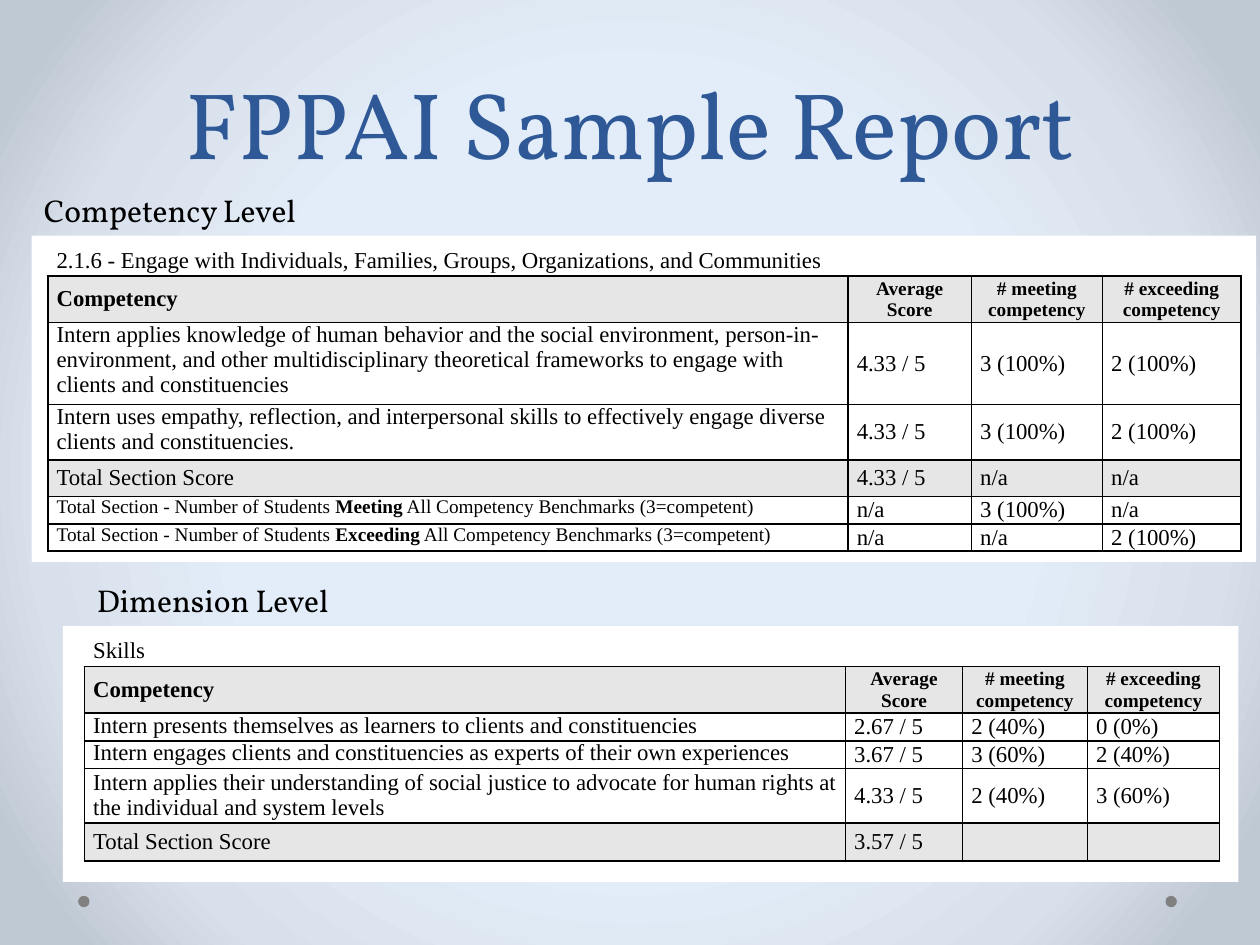
"""Build the FPPAI sample report slide with its competency and dimension tables."""
from lxml import etree
from pptx import Presentation
from pptx.dml.color import RGBColor
from pptx.enum.shapes import MSO_SHAPE
from pptx.enum.text import MSO_ANCHOR, MSO_AUTO_SIZE, PP_ALIGN
from pptx.oxml import parse_xml
from pptx.util import Inches, Pt

RECT, OVAL = MSO_SHAPE.RECTANGLE, MSO_SHAPE.OVAL
TOP, MIDDLE, BOTTOM = MSO_ANCHOR.TOP, MSO_ANCHOR.MIDDLE, MSO_ANCHOR.BOTTOM
LEFT, CENTER = PP_ALIGN.LEFT, PP_ALIGN.CENTER
NO_FIT, GROW = MSO_AUTO_SIZE.NONE, MSO_AUTO_SIZE.SHAPE_TO_FIT_TEXT
A = "http://schemas.openxmlformats.org/drawingml/2006/main"
P = "http://schemas.openxmlformats.org/presentationml/2006/main"

THEME = {
    "heading_font": "Vollkorn", "table_font": "Times New Roman",
    "title": "2F5897", "ink": "000000", "panel": "FFFFFF", "shade": "E7E6E6", "dot": "808080",
    "glow": [(50, "E3EDF9"), (76, "D8E0EB"), (92, "BFC9D4")],
    "title_size": 54, "label_size": 18, "cell_size": 13, "small_size": 11,
}

TITLE = "FPPAI Sample Report"
HEADER = ["Competency", "Average Score", "# meeting competency", "# exceeding competency"]
TOTAL = "Total Section Score"
SECTIONS = [
    {
        "label": "Competency Level", "label_at": (0.25, 1.47, 3, 0.4),
        "panel_at": (0.25, 1.87, 9.72, 2.59), "table_at": (0.38, 1.97),
        "columns": [6.35, 0.98, 1.04, 1.1],
        "heights": [0.22, 0.37, 0.65, 0.44, 0.29, 0.21, 0.21],
        "caption": "2.1.6 - Engage with Individuals, Families, Groups, Organizations, and Communities",
        "rows": [
            ["Intern applies knowledge of human behavior and the social environment, person-in-environment, "
             "and other multidisciplinary theoretical frameworks to engage with clients and constituencies",
             "4.33 / 5", "3 (100%)", "2 (100%)"],
            ["Intern uses empathy, reflection, and interpersonal skills to effectively engage diverse "
             "clients and constituencies.", "4.33 / 5", "3 (100%)", "2 (100%)"],
            [TOTAL, "4.33 / 5", "n/a", "n/a"],
            ["Total Section - Number of Students **Meeting** All Competency Benchmarks (3=competent)",
             "n/a", "3 (100%)", "n/a"],
            ["Total Section - Number of Students **Exceeding** All Competency Benchmarks (3=competent)",
             "n/a", "n/a", "2 (100%)"],
        ],
    },
    {
        "label": "Dimension Level", "label_at": (0.67, 4.56, 3, 0.4),
        "panel_at": (0.5, 4.97, 9.33, 2.03), "table_at": (0.67, 5.07),
        "columns": [6.04, 0.93, 0.99, 1.05],
        "heights": [0.22, 0.37, 0.22, 0.22, 0.43, 0.3],
        "caption": "Skills",
        "rows": [
            ["Intern presents themselves as learners to clients and constituencies",
             "2.67 / 5", "2 (40%)", "0 (0%)"],
            ["Intern engages clients and constituencies as experts of their own experiences",
             "3.67 / 5", "3 (60%)", "2 (40%)"],
            ["Intern applies their understanding of social justice to advocate for human rights at "
             "the individual and system levels", "4.33 / 5", "2 (40%)", "3 (60%)"],
            [TOTAL, "3.57 / 5", "", ""],
        ],
    },
]
DOTS = [(9.25, 7.11, 0.09, 0.09), (0.62, 7.11, 0.09, 0.09)]


def box(at):
    return [Inches(length) for length in at]


def apply(target, values):
    for name, value in values.items():
        setattr(target, name, value)


def write(paragraph, text, size, font, color, bold=False):
    for index, piece in enumerate(text.split("**")):
        if piece:
            run = paragraph.add_run()
            run.text = piece
            apply(run.font, {"size": Pt(size), "name": font, "bold": bold or index % 2 == 1})
            run.font.color.rgb = RGBColor.from_string(color)


def paint_background(slide):
    stops = "".join(f'<a:gs pos="{pos * 1000}"><a:srgbClr val="{color}"/></a:gs>'
                    for pos, color in THEME["glow"])
    slide.element.cSld.insert(0, parse_xml(
        f'<p:bg xmlns:p="{P}" xmlns:a="{A}"><p:bgPr><a:gradFill rotWithShape="1">'
        f'<a:gsLst>{stops}</a:gsLst><a:path path="circle">'
        '<a:fillToRect l="50000" t="50000" r="50000" b="50000"/></a:path>'
        '</a:gradFill><a:effectLst/></p:bgPr></p:bg>'))


def add_block(slide, kind, at, color):
    block = slide.shapes.add_shape(kind, *box(at))
    block.shadow.inherit = False
    block.fill.solid()
    block.fill.fore_color.rgb = RGBColor.from_string(color)
    block.line.fill.background()


def draw_borders(cell, sides):
    properties = cell._tc.get_or_add_tcPr()
    for side in "LRTB":
        line = etree.SubElement(properties, f"{{{A}}}ln{side}", w=str(Pt(1)))
        if side in sides:
            fill = etree.SubElement(line, f"{{{A}}}solidFill")
            etree.SubElement(fill, f"{{{A}}}srgbClr", val=THEME["ink"])
        else:
            etree.SubElement(line, f"{{{A}}}noFill")


def format_cell(cell, text, row, column):
    header, total = row == 1, text == TOTAL
    small = header and column > 0 or "**" in text
    middle = header or total or column > 0 or text.startswith("Intern applies their")
    apply(cell, {"margin_left": Inches(0.07), "margin_right": Inches(0.07),
                 "margin_top": 0, "margin_bottom": 0,
                 "vertical_anchor": MIDDLE if middle else TOP})
    draw_borders(cell, "LRTB" if row else "B")
    paragraph = cell.text_frame.paragraphs[0]
    paragraph.alignment = CENTER if header and column else LEFT
    write(paragraph, text, THEME["small_size" if small else "cell_size"],
          THEME["table_font"], THEME["ink"], header)


def add_report(slide, section):
    rows = [[section["caption"], "", "", ""], HEADER, *section["rows"]]
    columns, heights = section["columns"], section["heights"]
    table = slide.shapes.add_table(
        len(rows), len(columns), *box((*section["table_at"], sum(columns), sum(heights)))).table
    apply(table, {"first_row": False, "horz_banding": False})
    for column, width in zip(table.columns, columns):
        column.width = Inches(width)
    for r, (texts, height) in enumerate(zip(rows, heights)):
        table.rows[r].height = Inches(height)
        shaded = texts[0] in (HEADER[0], TOTAL)
        for c, text in enumerate(texts):
            cell = table.cell(r, c)
            format_cell(cell, text, r, c)
            if shaded:
                cell.fill.solid()
                cell.fill.fore_color.rgb = RGBColor.from_string(THEME["shade"])
            else:
                cell.fill.background()
    table.cell(0, 0).merge(table.cell(0, len(columns) - 1))


def add_label(slide, section):
    frame = slide.shapes.add_textbox(*box(section["label_at"])).text_frame
    apply(frame, {"word_wrap": True, "auto_size": GROW})
    write(frame.paragraphs[0], section["label"], THEME["label_size"],
          THEME["heading_font"], THEME["ink"])


def main():
    deck = Presentation()
    apply(deck, {"slide_width": Inches(10), "slide_height": Inches(7.5)})
    slide = deck.slides.add_slide(deck.slide_layouts[5])
    paint_background(slide)
    for at in DOTS:
        add_block(slide, OVAL, at, THEME["dot"])
    for section in reversed(SECTIONS):
        add_block(slide, RECT, section["panel_at"], THEME["panel"])

    title = slide.shapes.title
    apply(title, dict(zip(("left", "top", "width", "height"), box((0.5, 0, 9, 1.47)))))
    apply(title.text_frame, {"vertical_anchor": BOTTOM, "auto_size": NO_FIT, "word_wrap": True})
    heading = title.text_frame.paragraphs[0]
    apply(heading, {"alignment": CENTER, "line_spacing": Pt(58)})
    write(heading, TITLE, THEME["title_size"], THEME["heading_font"], THEME["title"])

    for section in SECTIONS:
        add_label(slide, section)
    for section in SECTIONS:
        add_report(slide, section)
    deck.save("out.pptx")


if __name__ == "__main__":
    main()
